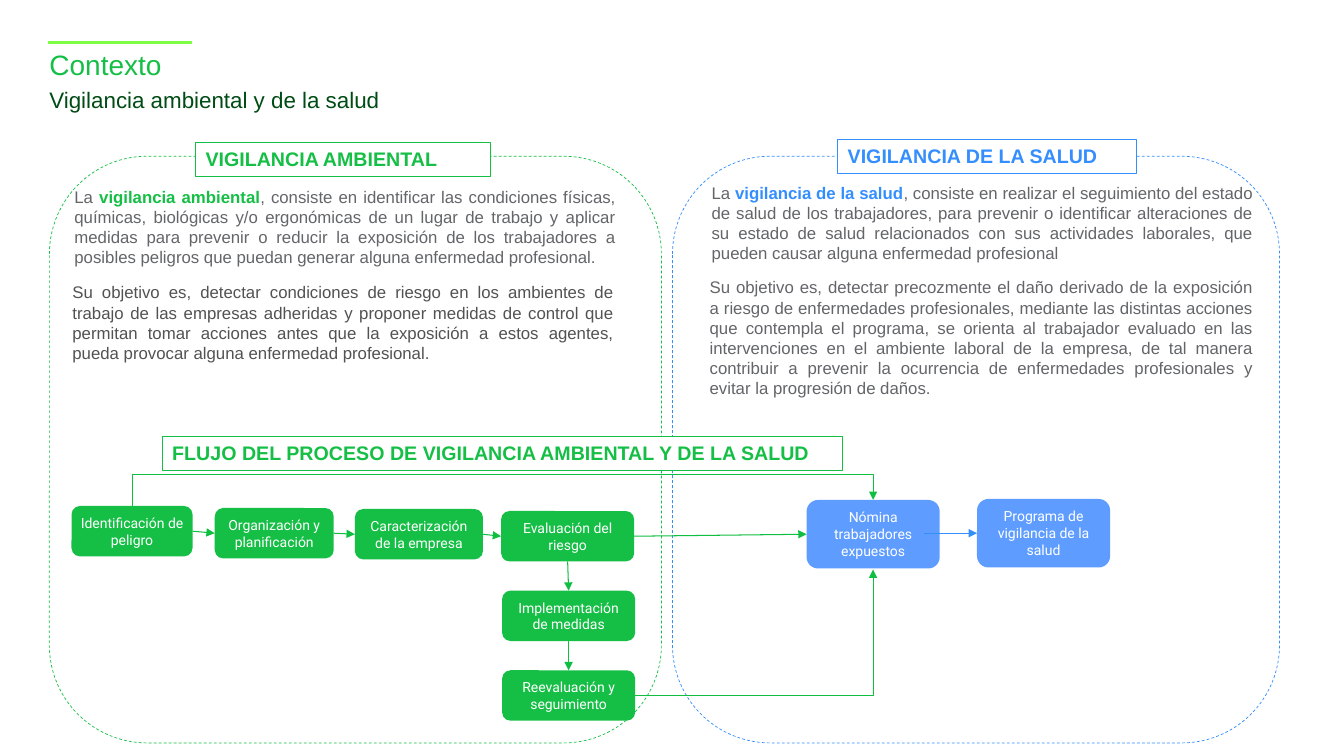
from dataclasses import dataclass

from lxml.etree import SubElement
from pptx import Presentation
from pptx.dml.color import RGBColor
from pptx.enum.dml import MSO_LINE
from pptx.enum.shapes import MSO_CONNECTOR, MSO_SHAPE
from pptx.enum.text import MSO_ANCHOR, PP_ALIGN
from pptx.oxml.ns import qn
from pptx.util import Inches, Pt


@dataclass(frozen=True)
class Theme:
    green: str = "15BF45"
    arrow: str = "10BF42"
    blue: str = "348EFE"
    sky: str = "5E9DFF"
    lime: str = "7CFF44"
    dark: str = "014B14"
    grey: str = "646569"
    coal: str = "525252"
    white: str = "FFFFFF"
    font: str = "Arial"
    label: str = "Roboto"
    title: int = 20
    subtitle: int = 16
    head: int = 14
    body: int = 12
    small: int = 10


T = Theme()
TOP, LEFT, BOTTOM, RIGHT = range(4)
SIDE = 1.32  # width of the larger steps


def color(code):
    return RGBColor.from_string(code)


def style(run, size, code, bold=False, font=T.font):
    run.font.name, run.font.size, run.font.bold = font, Pt(size), bold
    run.font.color.rgb = color(code)


def inset(frame, x, y):
    frame.margin_left = frame.margin_right = Inches(x)
    frame.margin_top = frame.margin_bottom = Inches(y)
    frame.word_wrap = True


def heading(shape, text, y, size, code):
    shape.left, shape.top = Inches(0.49), Inches(y)
    shape.width, shape.height = Inches(9.13), Inches(0.31)
    frame = shape.text_frame
    frame.text = text
    inset(frame, 0, 0)
    frame.vertical_anchor = MSO_ANCHOR.TOP
    para = frame.paragraphs[0]
    para.alignment, para.line_spacing = PP_ALIGN.LEFT, 0.9
    style(para.runs[0], size, code)


def box(slide, kind, at, fill=None, line=None, width=0.75):
    shape = slide.shapes.add_shape(kind, *map(Inches, at))
    shape.shadow.inherit = False
    if fill:
        shape.fill.solid()
        shape.fill.fore_color.rgb = color(fill)
    else:
        shape.fill.background()
    if line:
        shape.line.color.rgb = color(line)
        shape.line.width = Pt(width)
    else:
        shape.line.fill.background()
    return shape


def panel(slide, at, code):
    frame = box(slide, MSO_SHAPE.ROUNDED_RECTANGLE, at, line=code, width=0.5)
    frame.line.dash_style = MSO_LINE.DASH


def banner(slide, at, text, code):
    frame = box(slide, MSO_SHAPE.RECTANGLE, at, T.white, code).text_frame
    frame.text = text
    inset(frame, 0.1, 0.05)
    frame.vertical_anchor = MSO_ANCHOR.TOP
    frame.paragraphs[0].alignment = PP_ALIGN.LEFT
    style(frame.paragraphs[0].runs[0], T.head, code, True)


def step(slide, at, text, fill):
    shape = box(slide, MSO_SHAPE.ROUNDED_RECTANGLE, at, fill)
    frame = shape.text_frame
    frame.text = text
    inset(frame, 0.06, 0.06)
    frame.vertical_anchor = MSO_ANCHOR.MIDDLE
    frame.paragraphs[0].alignment = PP_ALIGN.CENTER
    style(frame.paragraphs[0].runs[0], T.small, T.white, font=T.label)
    return shape


def prose(slide, at, parts):
    """Add justified text; parts are (text, colour, bold)."""
    frame = slide.shapes.add_textbox(*map(Inches, at)).text_frame
    inset(frame, 0.1, 0.05)
    para = frame.paragraphs[0]
    para.alignment = PP_ALIGN.JUSTIFY
    for text, code, bold in parts:
        run = para.add_run()
        run.text = text
        style(run, T.body, code, bold)


def wire(slide, start, end, code=T.arrow, width=0.75, head=True,
         kind=MSO_CONNECTOR.STRAIGHT):
    line = slide.shapes.add_connector(kind, *map(Inches, start + end))
    line.line.color.rgb = color(code)
    line.line.width = Pt(width)
    if head:
        SubElement(line.line._get_or_add_ln(), qn("a:tailEnd"), type="triangle")
    SubElement(line._element.spPr, qn("a:effectLst"))
    return line


def join(slide, first, last, out=RIGHT, into=LEFT):
    line = wire(slide, (0, 0), (1, 1))
    line.begin_connect(first, out)
    line.end_connect(last, into)


def bridge(slide, start, end, rise):
    """Add an elbow arrow that goes up by rise, across and down to end."""
    (x1, y1), (x2, y2) = start, end
    mx, my = (x1 + x2) / 2, (y1 + y2) / 2
    dx, dy = (y1 - y2) / 2, (x2 - x1) / 2
    line = wire(slide, (mx + dx, my + dy), (mx - dx, my - dy),
                kind=MSO_CONNECTOR.ELBOW)
    props = line._element.spPr
    props.find(qn("a:xfrm")).set("rot", "5400000")
    guides = props.find(qn("a:prstGeom")).find(qn("a:avLst"))
    ratio = round(rise / (y1 - y2) * 100000)
    SubElement(guides, qn("a:gd"), name="adj1", fmla=f"val {ratio}")


def corner(slide, start, end):
    """Add an arrow that goes across and then up."""
    line = wire(slide, start, end, kind=MSO_CONNECTOR.ELBOW)
    line._element.spPr.find(qn("a:prstGeom")).set("prst", "bentConnector2")


def texts(slide):
    prose(slide, (0.64, 1.8, 5.57, 0.91), [
        ("La ", T.grey, False),
        ("vigilancia ambiental", T.green, True),
        (", consiste en identificar las condiciones físicas, químicas, biológicas y/o "
         "ergonómicas de un lugar de trabajo y aplicar medidas para prevenir o reducir "
         "la exposición de los trabajadores a posibles peligros que puedan generar "
         "alguna enfermedad profesional.", T.grey, False)])
    prose(slide, (0.62, 2.75, 5.57, 0.91), [
        ("Su objetivo es, detectar condiciones de riesgo en los ambientes de trabajo de "
         "las empresas adheridas y proponer medidas de control que permitan tomar "
         "acciones antes que la exposición a estos agentes, pueda provocar alguna "
         "enfermedad profesional.", T.coal, False)])
    prose(slide, (6.96, 1.76, 5.57, 0.91), [
        ("La ", T.grey, False),
        ("vigilancia de la salud", T.blue, True),
        (", consiste en realizar el seguimiento del estado de salud de los trabajadores, "
         "para prevenir o identificar alteraciones de su estado de salud relacionados "
         "con sus actividades laborales, que pueden causar alguna enfermedad "
         "profesional", T.grey, False)])
    prose(slide, (6.94, 2.7, 5.59, 1.31), [
        ("Su objetivo es, detectar precozmente el daño derivado de la exposición a riesgo "
         "de enfermedades profesionales, mediante las distintas acciones que contempla "
         "el programa, se orienta al trabajador evaluado en las intervenciones en el "
         "ambiente laboral de la empresa, de tal manera contribuir a prevenir la "
         "ocurrencia de enfermedades profesionales y evitar la progresión de daños.",
         T.grey, False)])


def flow(slide):
    chain = [step(slide, (x, y, w, 0.5), text, T.green) for x, y, w, text in (
        (0.71, 5.02, 1.2, "Identificación de peligro"),
        (2.13, 5.04, 1.18, "Organización y planificación"),
        (3.52, 5.05, 1.27, "Caracterización de la empresa"),
        (4.97, 5.07, SIDE, "Evaluación del riesgo"))]
    apply = step(slide, (4.98, 5.86, SIDE, 0.5), "Implementación de medidas", T.green)
    review = step(slide, (4.98, 6.65, SIDE, 0.5), "Reevaluación y seguimiento", T.green)
    roll = step(slide, (8, 4.96, SIDE, 0.68), "Nómina trabajadores expuestos", T.sky)
    plan = step(slide, (9.69, 4.95, SIDE, 0.68), "Programa de vigilancia de la salud", T.sky)
    row = chain + [roll]
    for first, last in zip(row, row[1:]):
        join(slide, first, last)
    join(slide, chain[-1], apply, BOTTOM, TOP)
    join(slide, apply, review, BOTTOM, TOP)
    wire(slide, (9.16, 5.29), (9.69, 5.29), T.blue).end_connect(plan, LEFT)
    bridge(slide, (1.31, 5.02), (8.66, 4.96), 0.31)
    corner(slide, (6.3, 6.9), (8.66, 5.65))


def main():
    deck = Presentation()
    deck.slide_width, deck.slide_height = Inches(13.33), Inches(7.5)
    slide = deck.slides.add_slide(deck.slide_layouts[5])
    wire(slide, (0.48, 0.42), (1.9, 0.42), T.lime, 2, head=False)
    heading(slide.shapes.title, "Contexto", 0.51, T.title, T.green)
    sub = slide.shapes.add_textbox(0, 0, 0, 0)
    heading(sub, "Vigilancia ambiental y de la salud", 0.88, T.subtitle, T.dark)
    panel(slide, (0.49, 1.55, 6.07, 5.82), T.green)
    panel(slide, (6.67, 1.55, 6.02, 5.82), T.blue)
    banner(slide, (1.94, 1.41, 2.93, 0.34), "VIGILANCIA AMBIENTAL", T.green)
    banner(slide, (8.31, 1.38, 2.96, 0.34), "VIGILANCIA DE LA SALUD", T.blue)
    texts(slide)
    flow(slide)
    banner(slide, (1.61, 4.33, 6.75, 0.34),
           "FLUJO DEL PROCESO DE VIGILANCIA AMBIENTAL Y DE LA SALUD", T.green)
    deck.save("out.pptx")


if __name__ == "__main__":
    main()
